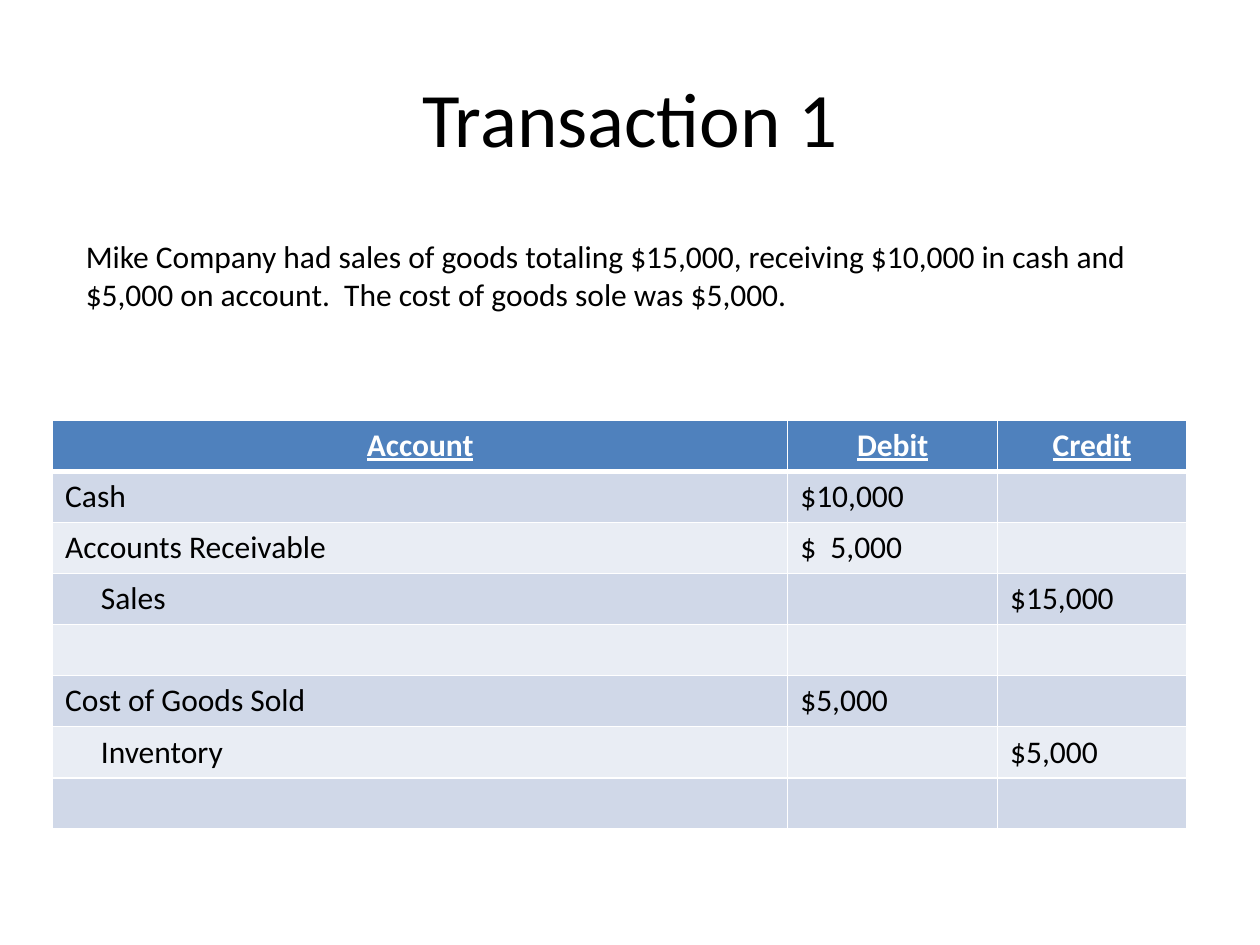
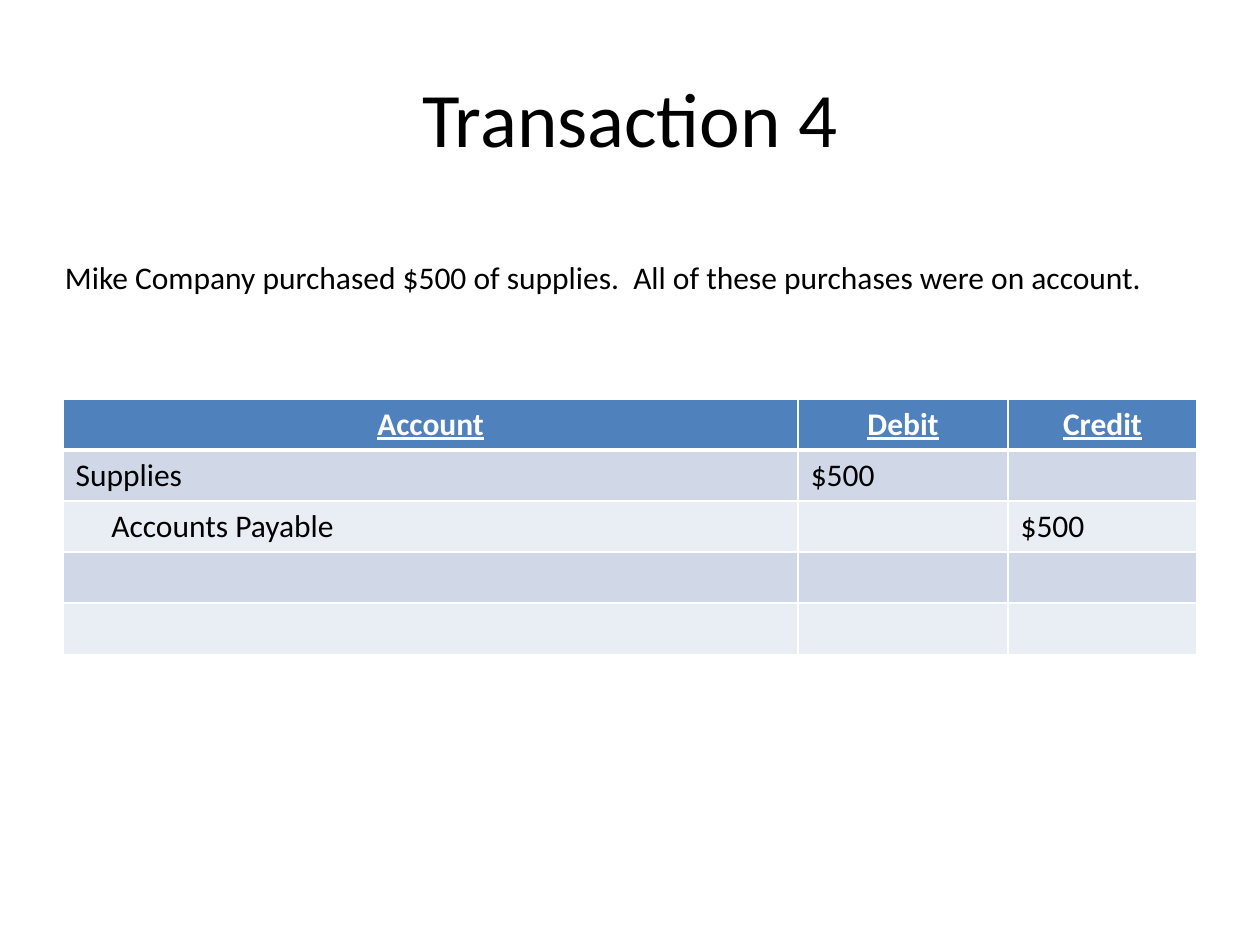
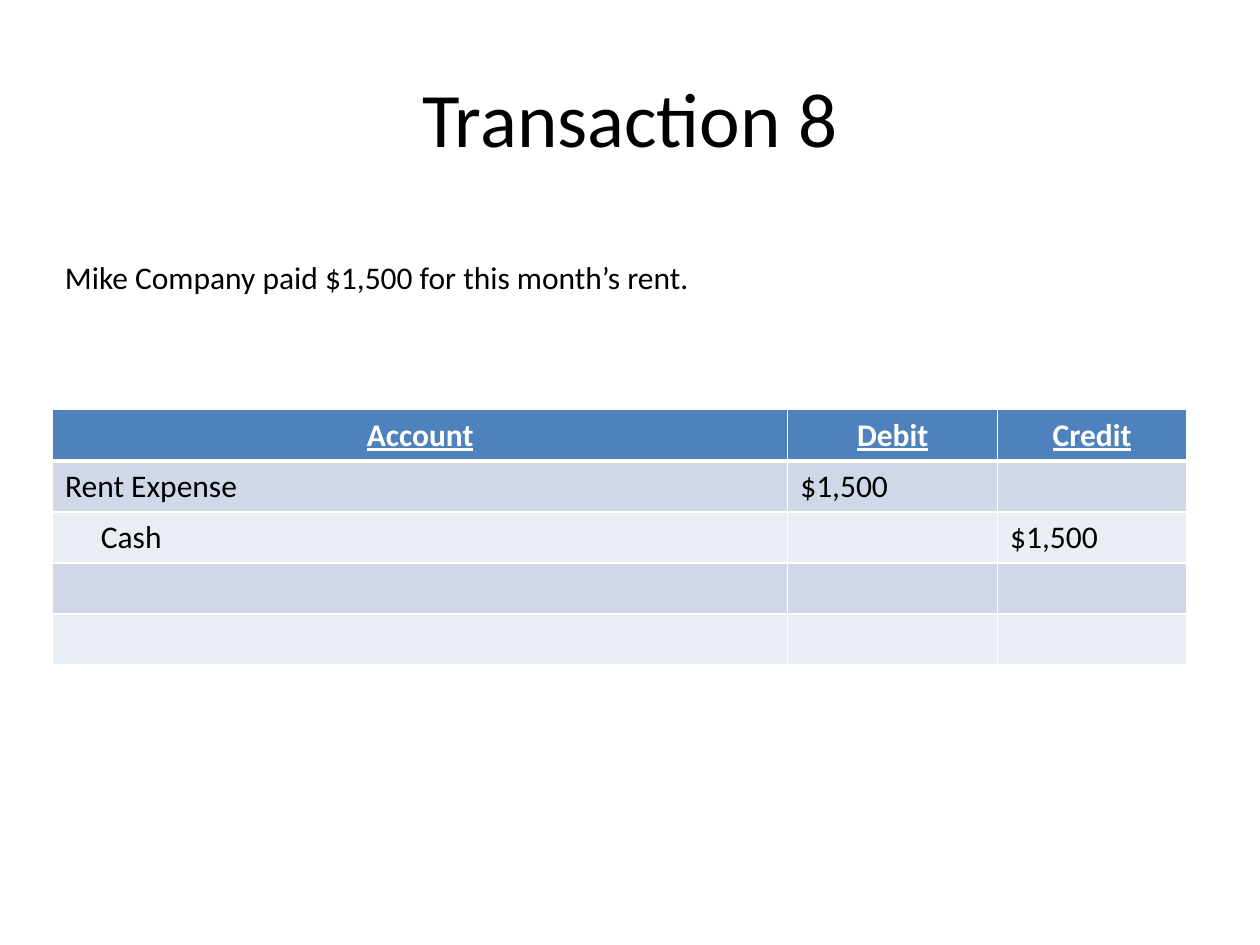
from lxml import etree
from pptx import Presentation
from pptx.dml.color import RGBColor
from pptx.enum.text import MSO_ANCHOR, MSO_AUTO_SIZE, PP_ALIGN
from pptx.oxml.ns import qn
from pptx.util import Cm, Pt

LEFT, CENTER = PP_ALIGN.LEFT, PP_ALIGN.CENTER
MIDDLE = MSO_ANCHOR.MIDDLE
GROW = MSO_AUTO_SIZE.SHAPE_TO_FIT_TEXT

BLACK = RGBColor(0x00, 0x00, 0x00)
WHITE = RGBColor(0xFF, 0xFF, 0xFF)
HEADER_BLUE = RGBColor(0x4F, 0x81, 0xBD)
BANDS = (RGBColor(0xD0, 0xD8, 0xE8), RGBColor(0xE9, 0xED, 0xF4))

FONT = "Calibri"
TITLE_ONLY = 5
TITLE_BOX = (1.27, 0.76, 22.86, 3.18)
COLUMN_WIDTHS = (14.82, 4.23, 3.81)
ROW_HEIGHT = 1.03
CREDIT_INDENT = 0.72
HEADINGS = ("Account", "Debit", "Credit")
THIN, THICK = Pt(1), Pt(3)
BLANK = ("", "", "")

# Boxes are left, top, width, height in cm; a table takes only left and top.
# Rows are account, debit, credit; an account that is credited is indented.
TRANSACTIONS = [
    dict(
        title="Transaction 1",
        story="Mike Company had sales of goods totaling $15,000, receiving "
              "$10,000 in cash and $5,000 on account.  The cost of goods "
              "sole was $5,000.",
        story_box=(1.48, 4.65, 22.43, 1.8),
        table_at=(1.06, 8.47),
        entries=[
            ("Cash", "$10,000", ""),
            ("Accounts Receivable", "$  5,000", ""),
            ("Sales", "", "$15,000"),
            BLANK,
            ("Cost of Goods Sold", "$5,000", ""),
            ("Inventory", "", "$5,000"),
            BLANK,
        ],
    ),
    dict(
        title="Transaction 4",
        story="Mike Company purchased $500 of supplies.  All of these "
              "purchases were on account.",
        story_box=(1.06, 5.08, 23.07, 1.03),
        table_at=(1.27, 8.04),
        entries=[
            ("Supplies", "$500", ""),
            ("Accounts Payable", "", "$500"),
            BLANK,
            BLANK,
        ],
    ),
    dict(
        title="Transaction 8",
        story="Mike Company paid $1,500 for this month’s rent.",
        story_box=(1.06, 5.08, 22.86, 1.03),
        table_at=(1.06, 8.26),
        entries=[
            ("Rent Expense", "$1,500", ""),
            ("Cash", "", "$1,500"),
            BLANK,
            BLANK,
        ],
    ),
]


def write(tf, text, size=18, color=BLACK, bold=False, underline=False, align=LEFT):
    p = tf.paragraphs[0]
    p.alignment = align
    r = p.add_run()
    r.text = text
    r.font.name = FONT
    r.font.size = Pt(size)
    r.font.color.rgb = color
    r.font.bold = bold
    r.font.underline = underline


def add_borders(cell, top=THIN, bottom=THIN):
    tc_pr = cell._tc.get_or_add_tcPr()
    sides = (("a:lnL", THIN), ("a:lnR", THIN), ("a:lnT", top), ("a:lnB", bottom))
    for i, (side, width) in enumerate(sides):
        ln = etree.Element(qn(side), w=str(width))
        fill = etree.SubElement(ln, qn("a:solidFill"))
        etree.SubElement(fill, qn("a:srgbClr"), val=str(WHITE))
        tc_pr.insert(i, ln)


def fill_cell(cell, color):
    cell.fill.solid()
    cell.fill.fore_color.rgb = color


def add_title(slide, text, box):
    sp = slide.shapes.title
    sp.left, sp.top, sp.width, sp.height = map(Cm, box)
    sp.text_frame.vertical_anchor = MIDDLE
    write(sp.text_frame, text, size=44, align=CENTER)


def add_story(slide, text, box):
    tf = slide.shapes.add_textbox(*map(Cm, box)).text_frame
    tf.word_wrap = True
    tf.auto_size = GROW
    write(tf, text)


def add_journal(slide, entries, left, top):
    """Add a table of debits and credits under a header row."""
    rows = len(entries) + 1
    table = slide.shapes.add_table(
        rows, len(HEADINGS), Cm(left), Cm(top),
        Cm(sum(COLUMN_WIDTHS)), Cm(rows * ROW_HEIGHT)).table
    for column, width in zip(table.columns, COLUMN_WIDTHS):
        column.width = Cm(width)
    for row in table.rows:
        row.height = Cm(ROW_HEIGHT)

    for col, heading in enumerate(HEADINGS):
        cell = table.cell(0, col)
        fill_cell(cell, HEADER_BLUE)
        add_borders(cell, bottom=THICK)
        write(cell.text_frame, heading, color=WHITE, bold=True,
              underline=True, align=CENTER)

    for i, entry in enumerate(entries):
        for col, text in enumerate(entry):
            cell = table.cell(i + 1, col)
            fill_cell(cell, BANDS[i % 2])
            add_borders(cell, top=THIN if i else THICK)
            if text:
                write(cell.text_frame, text)
        if entry[2]:
            account = table.cell(i + 1, 0)
            account.margin_left += Cm(CREDIT_INDENT)


def add_transaction(prs, title, story, story_box, table_at, entries):
    slide = prs.slides.add_slide(prs.slide_layouts[TITLE_ONLY])
    add_title(slide, title, TITLE_BOX)
    add_journal(slide, entries, *table_at)
    add_story(slide, story, story_box)


def main():
    prs = Presentation()
    prs.slide_width, prs.slide_height = Cm(25.4), Cm(19.05)
    for transaction in TRANSACTIONS:
        add_transaction(prs, **transaction)
    prs.save("out.pptx")


if __name__ == "__main__":
    main()
